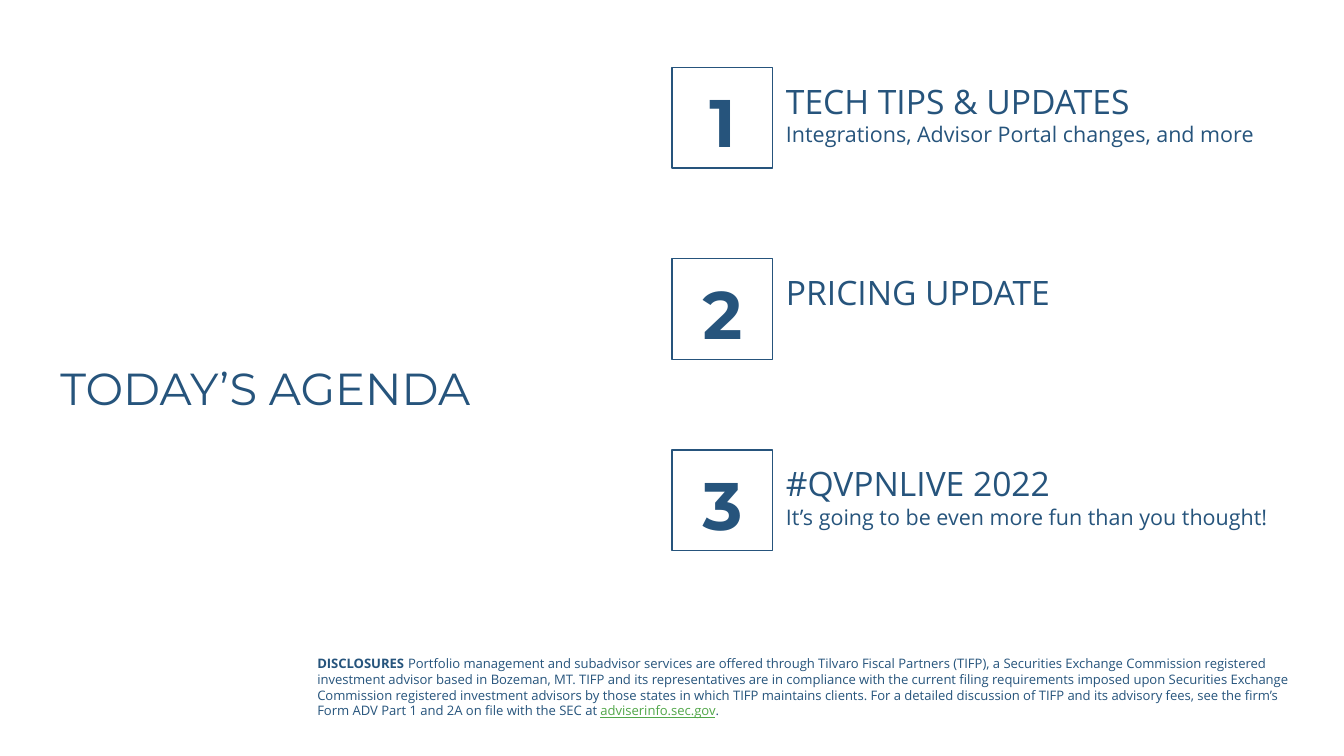
"""Build the agenda slide with three numbered topics and a disclosure."""
from dataclasses import dataclass

from pptx import Presentation
from pptx import util as u
from pptx.dml.color import RGBColor
from pptx.enum import shapes, text


@dataclass(frozen=True)
class Theme:
    navy: RGBColor = RGBColor(0x26, 0x54, 0x7C)
    green: RGBColor = RGBColor(0x51, 0xA7, 0x49)
    display: str = "Montserrat"
    body: str = "Open Sans"
    title: float = 24
    number: float = 36
    topic: float = 18
    detail: float = 11.5
    legal: float = 7
    legal_gap: float = 8


theme = Theme()


def add_span(para, words, size, face=theme.body, color=theme.navy, bold=False, underline=False):
    span = para.add_run()
    span.text = words
    span.font.name = face
    span.font.size = u.Pt(size)
    span.font.color.rgb = color
    span.font.bold = bold
    span.font.underline = underline


def prepare_frame(box):
    frame = box.text_frame
    frame.word_wrap = True
    frame.vertical_anchor = text.MSO_ANCHOR.TOP
    frame.margin_left = frame.margin_right = u.Pt(7.2)
    frame.margin_top = frame.margin_bottom = u.Pt(7.2)
    return frame


deck = Presentation()
deck.slide_width, deck.slide_height = u.Pt(720), u.Pt(405)
page = deck.slides.add_slide(deck.slide_layouts[6])

disclosure = page.shapes.add_textbox(u.Pt(162.9), u.Pt(343), u.Pt(541.4), u.Pt(50.4))
para = prepare_frame(disclosure).paragraphs[0]
add_span(para, "DISCLOSURES", theme.legal, bold=True)
add_span(para, " ", theme.legal_gap)
add_span(
    para,
    "Portfolio management and subadvisor services are offered through Tilvaro Fiscal Partners (TIFP), "
    "a Securities Exchange Commission registered investment advisor based in Bozeman, MT. TIFP and its "
    "representatives are in compliance with the current filing requirements imposed upon Securities "
    "Exchange Commission registered investment advisors by those states in which TIFP maintains clients. "
    "For a detailed discussion of TIFP and its advisory fees, see the firm’s Form ADV Part 1 and 2A on "
    "file with the SEC at ",
    theme.legal,
)
add_span(para, "adviserinfo.sec.gov", theme.legal, color=theme.green, underline=True)
add_span(para, ".", theme.legal)

title = page.shapes.add_textbox(u.Pt(25.2), u.Pt(185.8), u.Pt(262.8), u.Pt(68.4))
add_span(prepare_frame(title).paragraphs[0], "TODAY’S AGENDA", theme.title, theme.display)

topics = [
    ("TECH TIPS & UPDATES", "Integrations, Advisor Portal changes, and more"),
    ("PRICING UPDATE", None),
    ("#QVPNLIVE 2022", "It’s going to be even more fun than you thought!"),
]
first_top, pitch, side, left = 36, 102.5, 54, 360

for index, (heading, detail) in enumerate(topics):
    top = u.Pt(first_top + index * pitch)

    square = page.shapes.add_shape(shapes.MSO_SHAPE.RECTANGLE, u.Pt(left), top, u.Pt(side), u.Pt(side))
    square.shadow.inherit = False
    square.fill.background()
    square.line.color.rgb = theme.navy
    square.line.width = u.Pt(0.75)
    para = prepare_frame(square).paragraphs[0]
    para.alignment = text.PP_ALIGN.CENTER
    add_span(para, str(index + 1), theme.number, theme.display, bold=True)

    topic = page.shapes.add_textbox(u.Pt(left + side), top, u.Pt(280), u.Pt(side))
    frame = prepare_frame(topic)
    add_span(frame.paragraphs[0], heading, theme.topic)
    if detail:
        add_span(frame.add_paragraph(), detail, theme.detail)

deck.save("out.pptx")
